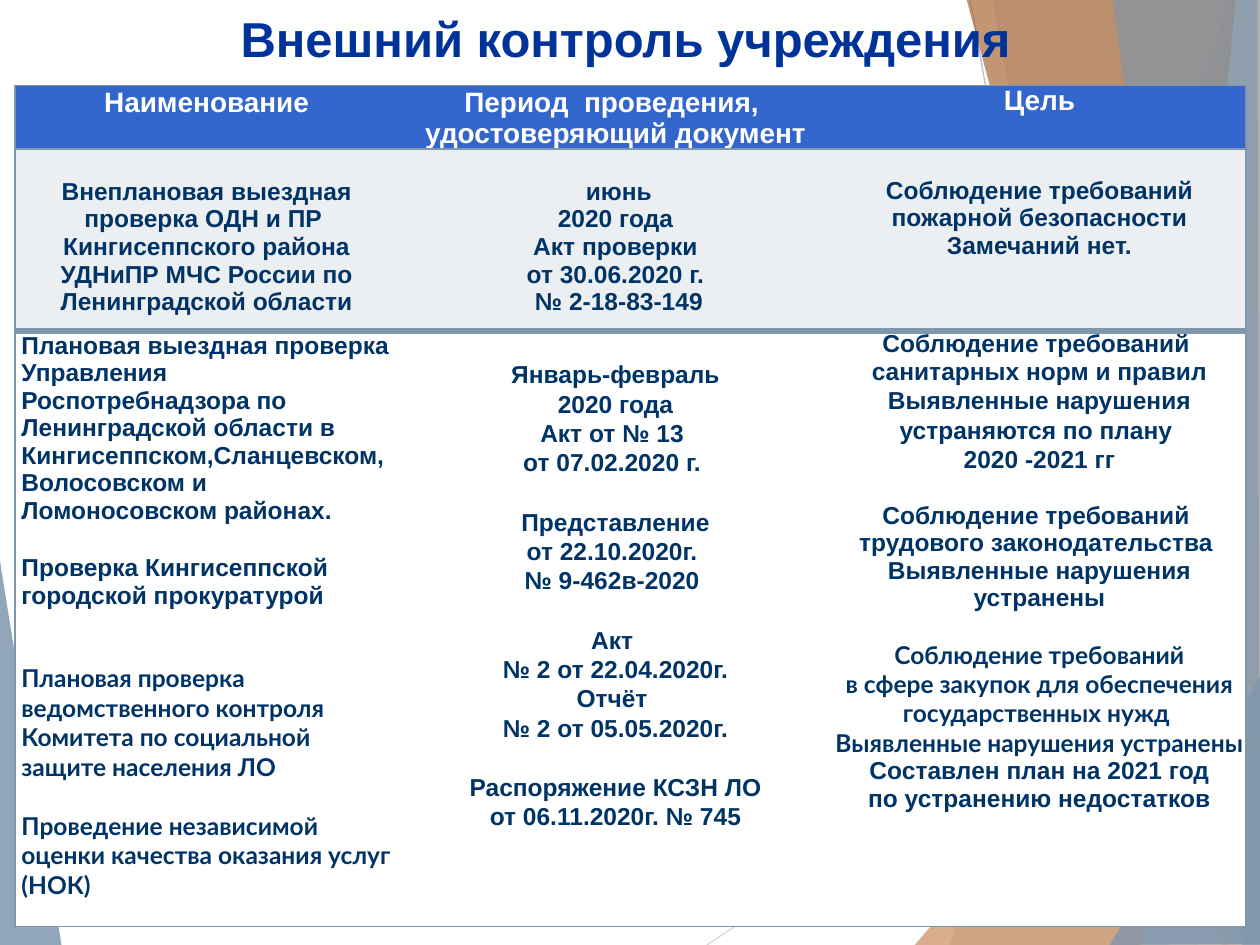
from dataclasses import dataclass

from lxml.etree import SubElement
from pptx import Presentation
from pptx.dml.color import RGBColor
from pptx.enum.shapes import MSO_CONNECTOR
from pptx.enum.text import MSO_ANCHOR, PP_ALIGN
from pptx.oxml.ns import qn
from pptx.util import Inches, Pt

STEEL = "7E97AD"
NAVY = "003366"


def color(value):
    return RGBColor.from_string(value)


@dataclass
class Para:
    text: str
    before: float = 0
    spacing: float = 1.0
    font: str = "Arial"


@dataclass
class Cell:
    paras: list
    top: float = 0.01
    side: float = 0.05
    align: PP_ALIGN = PP_ALIGN.CENTER


class SlideBuilder:
    font = "Arial"

    def __init__(self, s):
        self.s = s

    def facet(self, points, fill, opacity):
        (x, y), *rest = [(Inches(x), Inches(y)) for x, y in points]
        fb = self.s.shapes.build_freeform(x, y)
        fb.add_line_segments(rest, close=True)
        sp = fb.convert_to_shape()
        sp.shadow.inherit = False
        sp.fill.solid()
        sp.fill.fore_color.rgb = color(fill)
        sp.line.fill.background()
        clr = sp.element.spPr.find(".//" + qn("a:srgbClr"))
        SubElement(clr, qn("a:alpha"), val=str(opacity * 1000))

    def line(self, x1, y1, x2, y2, stroke):
        cn = self.s.shapes.add_connector(
            MSO_CONNECTOR.STRAIGHT, Inches(x1), Inches(y1), Inches(x2), Inches(y2))
        cn.line.color.rgb = color(stroke)
        cn.line.width = Pt(0.75)
        SubElement(cn.element.spPr, qn("a:effectLst"))

    def title(self, text):
        sp = self.s.shapes.title
        sp.left, sp.top = Inches(0.2), Inches(0.02)
        sp.width, sp.height = Inches(9.53), Inches(7.48)
        sp.element.getparent().append(sp.element)
        tf = sp.text_frame
        tf.text = text
        tf.word_wrap = True
        tf.vertical_anchor = MSO_ANCHOR.TOP
        p = tf.paragraphs[0]
        p.alignment = PP_ALIGN.CENTER
        self.style(p, 28, "003399")

    def style(self, p, size, rgb, font=None):
        p.font.name = font or self.font
        p.font.size = Pt(size)
        p.font.bold = True
        p.font.color.rgb = color(rgb)

    def border(self, cell, side, width):
        ln = SubElement(cell._tc.get_or_add_tcPr(), qn("a:ln" + side), w=str(Pt(width)))
        if width:
            fill = SubElement(ln, qn("a:solidFill"))
            SubElement(fill, qn("a:srgbClr"), val=STEEL)
        else:
            SubElement(ln, qn("a:noFill"))

    def fill_cell(self, cell, content, size, rgb, fill):
        cell.margin_left = cell.margin_right = Inches(content.side)
        cell.margin_top, cell.margin_bottom = Inches(content.top), 0
        cell.vertical_anchor = MSO_ANCHOR.TOP
        cell.fill.solid()
        cell.fill.fore_color.rgb = color(fill)
        tf = cell.text_frame
        for i, para in enumerate(content.paras):
            p = tf.add_paragraph() if i else tf.paragraphs[0]
            p.text = para.text
            p.alignment = content.align
            p.line_spacing = para.spacing
            p.space_before = Pt(para.before)
            self.style(p, size, rgb, para.font)

    def table(self, left, top, widths, heights, rows, styles, rules):
        tbl = self.s.shapes.add_table(
            len(rows), len(widths), Inches(left), Inches(top),
            Inches(sum(widths)), Inches(sum(heights))).table
        for col, w in zip(tbl.columns, widths):
            col.width = Inches(w)
        last = len(widths) - 1
        for r, (row, style) in enumerate(zip(rows, styles)):
            tbl.rows[r].height = Inches(heights[r])
            for c, content in enumerate(row):
                cell = tbl.cell(r, c)
                self.border(cell, "L", 1 if c == 0 else 0)
                self.border(cell, "R", 1 if c == last else 0)
                self.border(cell, "T", rules[r])
                self.border(cell, "B", rules[r + 1])
                self.fill_cell(cell, content, *style)


def paras(*texts, **kw):
    return [Para(t, **kw) for t in texts]


FACETS = [
    ([(9.75, 0), (7.54, 7.5), (10.02, 7.51), (10.01, 0.01)], STEEL, 30),
    ([(7.88, -0.01), (9.19, 7.5), (10.01, 7.5), (10.01, -0.01)], STEEL, 20),
    ([(7.26, 7.5), (10, 4.29), (10.01, 7.5)], "CC8E60", 72),
    ([(7.67, -0.01), (9.7, 7.5), (10.01, 7.49), (10.01, -0.01)], "AA6837", 70),
    ([(9.81, -0.01), (9.07, 7.5), (10.01, 7.5), (10, -0.01)], "B2C1CE", 70),
    ([(8.83, -0.01), (9.86, 7.5), (10, 7.5), (9.98, -0.01)], STEEL, 65),
    ([(8.81, 7.5), (10.01, 5.35), (10.01, 7.49)], STEEL, 80),
]

HEADER = [
    Cell(paras("Наименование")),
    Cell(paras("Период  проведения, ", "удостоверяющий документ")),
    Cell(paras("Цель"), 0, 0),
]

FIRE_CHECK = [
    Cell(paras("Внеплановая выездная проверка ОДН и ПР  Кингисеппского района",
               "УДНиПР МЧС России по Ленинградской области"), 0.23),
    Cell(paras(" июнь", "2020 года", "Акт проверки", "от 30.06.2020 г.",
               " № 2-18-83-149"), 0.23),
    Cell(paras("Соблюдение требований пожарной безопасности Замечаний нет."), 0.22, 0),
]

OTHER_CHECKS = [
    Cell([
        Para("Плановая выездная проверка Управления Роспотребнадзора по "
             "Ленинградской области в Кингисеппском,Сланцевском,Волосовском и "
             "Ломоносовском районах."),
        Para("Проверка Кингисеппской городской прокуратурой", 17),
        Para("Плановая проверка ведомственного контроля", 31, font="Lato"),
        Para("Комитета по социальной защите населения ЛО", font="Lato"),
        Para("Проведение независимой оценки качества оказания услуг (НОК)", 17, font="Lato"),
    ], align=PP_ALIGN.LEFT),
    Cell([
        *paras("Январь-февраль", "2020 года", "Акт от № 13 ", "от 07.02.2020 г. ",
               spacing=1.07),
        Para("Представление", 17, 1.07),
        *paras("от 22.10.2020г. ", "№ 9-462в-2020 ", spacing=1.07),
        Para("Акт ", 17, 1.07),
        *paras("№ 2 от 22.04.2020г.", "Отчёт ", "№ 2 от 05.05.2020г.", spacing=1.07),
        Para("Распоряжение КСЗН ЛО", 17, 1.07),
        Para("от 06.11.2020г. № 745", spacing=1.07),
    ], 0.23),
    Cell([
        *paras("Соблюдение требований ", "санитарных норм и правил"),
        *paras("Выявленные нарушения устраняются по плану ", "2020 -2021 гг",
               spacing=1.07),
        Para("Соблюдение требований ", 16),
        *paras("трудового законодательства ", "Выявленные нарушения устранены"),
        Para("Соблюдение требований", 16, font="Lato"),
        *paras("в сфере закупок для обеспечения государственных нужд ",
               "Выявленные нарушения устранены", font="Lato"),
        *paras("Составлен план на 2021 год", "по устранению недостатков"),
    ], 0, 0),
]


def main():
    prs = Presentation()
    prs.slide_width, prs.slide_height = Inches(10), Inches(7.5)
    b = SlideBuilder(prs.slides.add_slide(prs.slide_layouts[5]))
    b.facet([(-0.01, 4.39), (0.49, 7.51), (-0.01, 7.5)], STEEL, 85)
    b.line(5.61, 7.5, 10.01, 4.57, "D9D9D9")
    b.line(7.7, 0, 9.04, 7.5, "BFBFBF")
    for points, fill, opacity in FACETS:
        b.facet(points, fill, opacity)
    b.title("Внешний контроль учреждения")
    b.table(0.12, 0.68, [3.04, 3.45, 3.28], [0.5, 1.44, 4.73],
            [HEADER, FIRE_CHECK, OTHER_CHECKS],
            [(16, "FFFFFF", "3366CC"), (14, NAVY, "ECEFF1"), (14, NAVY, "FFFFFF")],
            [1, 1, 4, 1])
    prs.save("out.pptx")


if __name__ == "__main__":
    main()
